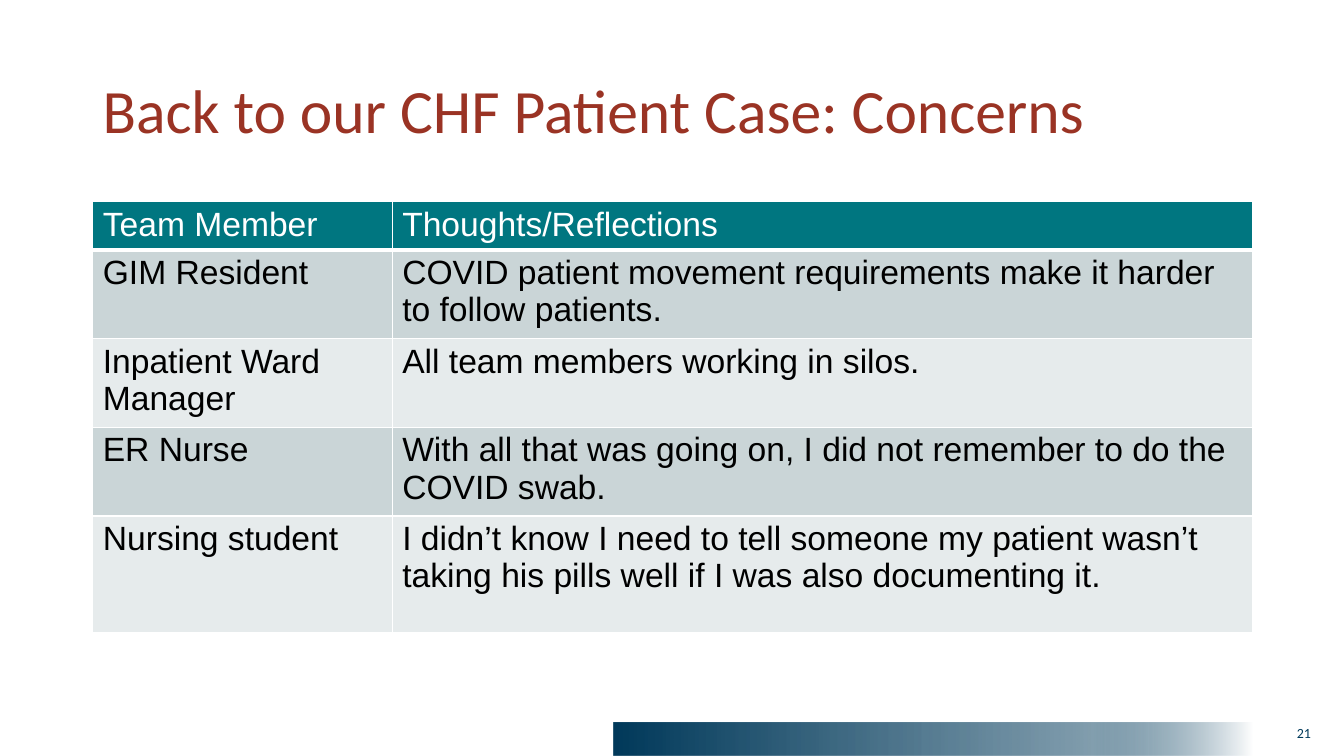
import pptx
import pptx.dml.color
import pptx.enum.shapes
import pptx.enum.text
import pptx.oxml
import pptx.oxml.ns
import pptx.util
from pptx.util import Inches

WHITE, NAVY = "FFFFFF", "003A5B"
HEADER_FILL = "007680"
BAND_FILLS = ["CAD5D7", "E6EBEC"]
COLUMN_WIDTHS = [2.97, 8.53]
ROW_HEIGHTS = [0.47, 0.81, 0.81, 0.81, 1.16]
CONCERNS = [
    ("Team Member", "Thoughts/Reflections"),
    ("GIM Resident",
     "COVID patient movement requirements make it harder to follow patients."),
    ("Inpatient Ward Manager", "All team members working in silos."),
    ("ER Nurse",
     "With all that was going on, I did not remember to do the COVID swab."),
    ("Nursing student",
     "I didn’t know I need to tell someone my patient wasn’t taking his pills "
     "well if I was also documenting it."),
]
# Position, colour and opacity, all in percent except the colour
FOOTER_STOPS = [(0, NAVY, 100), (45, NAVY, 69), (75, NAVY, 49), (100, WHITE, 100)]


def rgb(value):
    return pptx.dml.color.RGBColor.from_string(value)


def add_run(para, text, size, font, color):
    span = para.add_run()
    span.text = text
    span.font.size = pptx.util.Pt(size)
    span.font.name = font
    span.font.bold = False
    span.font.color.rgb = rgb(color)


def add_text(page, left, top, width, height, text, size, color):
    """Add a one-line Calibri text box and return it."""
    box = page.shapes.add_textbox(
        Inches(left), Inches(top), Inches(width), Inches(height))
    box.text_frame.word_wrap = True
    add_run(box.text_frame.paragraphs[0], text, size, "Calibri", color)
    return box


def add_title(page, text):
    frame = add_text(page, 0.92, 0.4, 11.5, 1.45, text, 44, "9A3324").text_frame
    frame.vertical_anchor = pptx.enum.text.MSO_ANCHOR.MIDDLE
    frame.paragraphs[0].line_spacing = 0.9


def add_page_number(page, number):
    box = add_text(page, 12.42, 7.14, 0.68, 0.35, number, 10, NAVY)
    box.text_frame.paragraphs[0].alignment = pptx.enum.text.PP_ALIGN.RIGHT


def add_footer_bar(page):
    bar = page.shapes.add_shape(
        pptx.enum.shapes.MSO_SHAPE.RECTANGLE,
        Inches(6.09), Inches(7.17), Inches(6.33), Inches(0.33))
    bar.shadow.inherit = False
    bar.line.fill.background()
    bar.fill.gradient()
    bar.fill.gradient_angle = 0
    stops = bar.element.spPr.find(".//" + pptx.oxml.ns.qn("a:gsLst"))
    for stop in list(stops):
        stops.remove(stop)
    for position, color, opacity in FOOTER_STOPS:
        stops.append(pptx.oxml.parse_xml(
            f'<a:gs {pptx.oxml.ns.nsdecls("a")} pos="{position * 1000}">'
            f'<a:srgbClr val="{color}"><a:alpha val="{opacity * 1000}"/>'
            '</a:srgbClr></a:gs>'))


def set_borders(cell, top, bottom):
    """Draw white cell borders; top and bottom are widths in points."""
    properties = cell._tc.get_or_add_tcPr()
    for side, width in (("L", 1), ("R", 1), ("T", top), ("B", bottom)):
        properties.append(pptx.oxml.parse_xml(
            f'<a:ln{side} {pptx.oxml.ns.nsdecls("a")} w="{pptx.util.Pt(width)}">'
            f'<a:solidFill><a:srgbClr val="{WHITE}"/></a:solidFill></a:ln{side}>'))


def fill_cell(cell, text, row):
    set_borders(cell, top=3 if row == 1 else 1, bottom=3 if row == 0 else 1)
    cell.fill.solid()
    cell.fill.fore_color.rgb = rgb(BAND_FILLS[(row - 1) % 2] if row else HEADER_FILL)
    cell.margin_left = cell.margin_right = Inches(0.1)
    cell.margin_top = cell.margin_bottom = Inches(0.04)
    add_run(cell.text_frame.paragraphs[0], text, 24, "Arial",
            "000000" if row else WHITE)


def add_concerns_table(page):
    table = page.shapes.add_table(
        len(CONCERNS), len(COLUMN_WIDTHS), Inches(0.92), Inches(2),
        Inches(sum(COLUMN_WIDTHS)), Inches(sum(ROW_HEIGHTS))).table
    for column, width in zip(table.columns, COLUMN_WIDTHS):
        column.width = Inches(width)
    for row, (height, texts) in enumerate(zip(ROW_HEIGHTS, CONCERNS)):
        table.rows[row].height = Inches(height)
        for column, text in enumerate(texts):
            fill_cell(table.cell(row, column), text, row)


def main():
    deck = pptx.Presentation()
    deck.slide_width, deck.slide_height = Inches(13.33), Inches(7.5)
    page = deck.slides.add_slide(deck.slide_layouts[6])
    add_footer_bar(page)
    add_title(page, "Back to our CHF Patient Case: Concerns")
    add_concerns_table(page)
    add_page_number(page, "21")
    deck.save("out.pptx")


if __name__ == "__main__":
    main()
